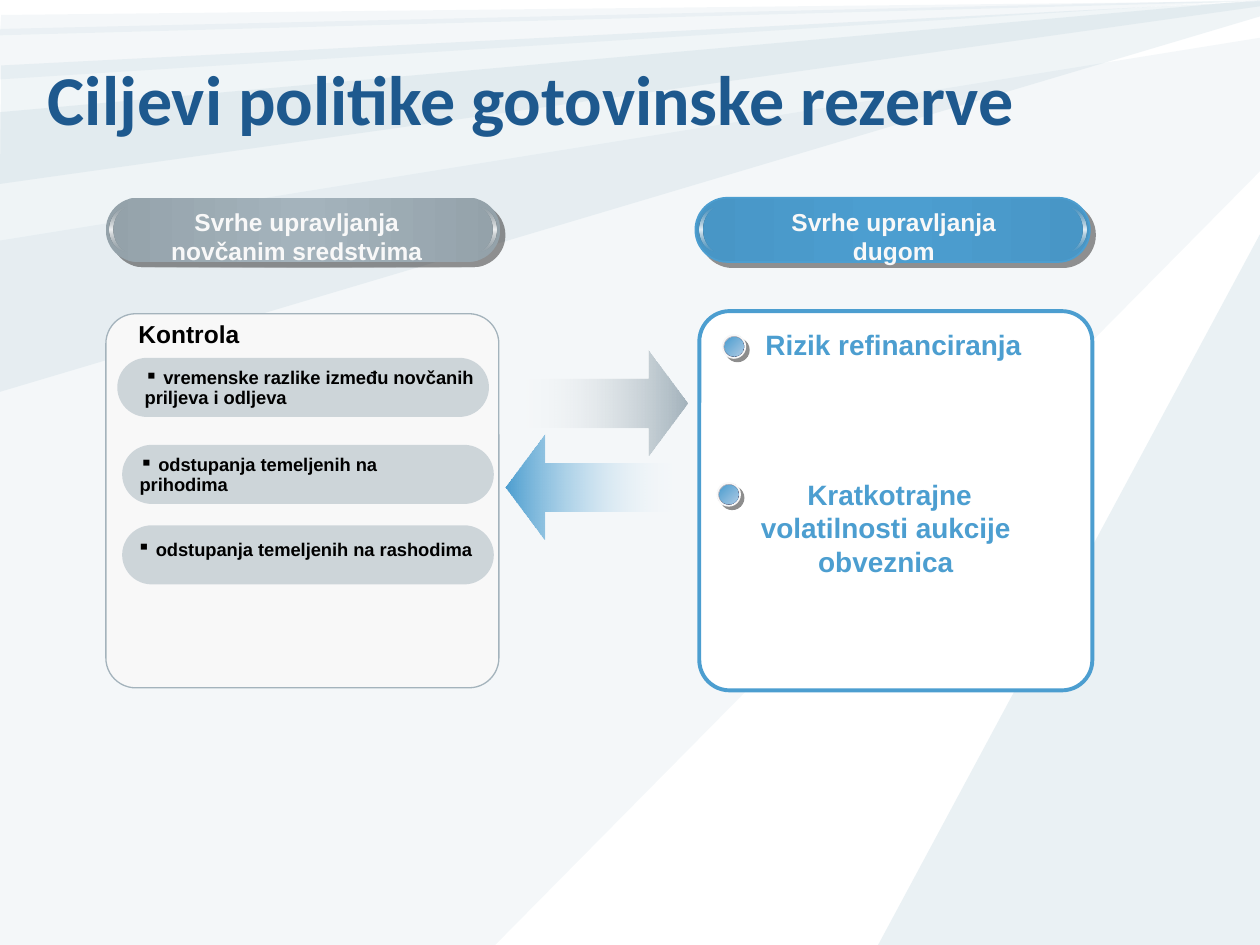
import pptx
import pptx.dml.color
import pptx.enum.shapes
import pptx.enum.text
import pptx.oxml.ns
import pptx.util
from lxml import etree

Pt = pptx.util.Pt
RGBColor = pptx.dml.color.RGBColor
Shape = pptx.enum.shapes.MSO_SHAPE
Align = pptx.enum.text.PP_ALIGN
qn = pptx.oxml.ns.qn

WHITE = RGBColor(0xFF, 0xFF, 0xFF)
BLACK = RGBColor(0x00, 0x00, 0x00)
OFF_WHITE = RGBColor(0xF8, 0xF8, 0xF8)
NAVY = RGBColor(0x1E, 0x59, 0x8E)
BLUE = RGBColor(0x4C, 0x9E, 0xD0)
DEEP_BLUE = RGBColor(0x48, 0x96, 0xC6)
PALE_BLUE = RGBColor(0xAC, 0xC9, 0xE3)
GRAY = RGBColor(0xA4, 0xB3, 0xBC)
DEEP_GRAY = RGBColor(0x94, 0xA2, 0xAA)
RAY = RGBColor(0x97, 0xBA, 0xC9)
GLINT = RGBColor(0xB6, 0xB6, 0xB6)
RIM_LIGHT = RGBColor(0xDD, 0xDD, 0xE1)
RIM_DARK = RGBColor(0x22, 0x38, 0x64)
HEADER_SHADOW = RGBColor(0x29, 0x29, 0x29)
DOT_SHADOW = RGBColor(0x1C, 0x1C, 0x1C)

deck = pptx.Presentation()
deck.slide_width, deck.slide_height = Pt(720), Pt(540)
page = deck.slides.add_slide(deck.slide_layouts[5])
shapes = page.shapes


def paint(shape, stops, angle=0, line=None, width=1, shadow=None, distance=0):
    shape.shadow.inherit = False
    properties = shape._element.spPr
    if len(stops) == 1:
        shape.fill.solid()
        shape.fill.fore_color.rgb = stops[0][1]
        colors = [(properties.find(qn("a:solidFill"))[0], stops[0][2])]
    else:
        shape.fill.gradient()
        gradient = properties.find(qn("a:gradFill"))
        gradient.find(qn("a:lin")).set("ang", str(angle * 60000))
        stop_list = gradient.find(qn("a:gsLst"))
        for old_stop in list(stop_list):
            stop_list.remove(old_stop)
        colors = []
        for position, color, alpha in stops:
            stop = etree.SubElement(stop_list, qn("a:gs"), pos=str(position * 1000))
            colors.append((etree.SubElement(stop, qn("a:srgbClr"), val=str(color)), alpha))
    if shadow is not None:
        effect = etree.SubElement(
            properties.find(qn("a:effectLst")), qn("a:outerShdw"),
            dist=str(Pt(distance)), dir="2700000", algn="ctr", rotWithShape="0")
        colors.append((etree.SubElement(effect, qn("a:srgbClr"), val=str(shadow)), 50))
    for element, alpha in colors:
        if alpha < 100:
            etree.SubElement(element, qn("a:alpha"), val=str(alpha * 1000))
    if line is None:
        shape.line.fill.background()
    else:
        shape.line.color.rgb = line
        shape.line.width = Pt(width)


def add_text(frame, text, size, color, align=Align.CENTER, wrap=True, spacing=None, bullet=False):
    box = shapes.add_textbox(*map(Pt, frame))
    box.text_frame.word_wrap = wrap
    box.text_frame.text = text
    for index, para in enumerate(box.text_frame.paragraphs):
        para.alignment = align
        para.line_spacing = spacing
        font = para.runs[0].font
        font.name, font.size, font.bold = "Arial", Pt(size), True
        font.color.rgb = color
        if bullet and index == 0:
            etree.SubElement(para._p.get_or_add_pPr(), qn("a:buChar"), char="▪")


rays = [
    (10, [(720, 21.6), (0, 137.5), (0, 540), (283, 540), (720, 97.9)]),
    (20, [(720, 133.9), (501.8, 540), (720, 540)]),
    (10, [(0.7, 8.6), (0, 20.2), (720, 0.7)]),
    (10, [(719.3, 0), (0, 45.4), (0, 16.6)]),
    (15, [(720, 9.4), (0, 223.9), (0, 64.1), (720, 0)]),
    (14, [(720, 0.7), (0.7, 37.4), (0, 105.1), (720, 3.6)]),
]
for alpha, points in rays:
    corners = [(Pt(x), Pt(y)) for x, y in points]
    builder = shapes.build_freeform(*corners[0])
    builder.add_line_segments(corners[1:], close=True)
    paint(builder.convert_to_shape(), [(0, RAY, alpha)])

title = shapes.title
shapes._spTree.append(title._element)
title.left, title.top, title.width, title.height = map(Pt, (20.2, 10.8, 581.8, 90))
title.text_frame.text = "Ciljevi politike gotovinske rezerve"
title.text_frame.auto_size = pptx.enum.text.MSO_AUTO_SIZE.NONE
title.text_frame.vertical_anchor = pptx.enum.text.MSO_ANCHOR.MIDDLE
title.text_frame.paragraphs[0].alignment = Align.LEFT
span = title.text_frame.paragraphs[0].runs[0]
span.font.name, span.font.size, span.font.bold = "Calibri", Pt(40), True
span.font.color.rgb = NAVY

panels = [
    ((399.6, 177.8, 224.6, 216.7), WHITE, BLUE, 2.25),
    ((60.5, 179.3, 224.6, 213.8), OFF_WHITE, GRAY, 0.75),
]
for frame, color, border, width in panels:
    panel = shapes.add_shape(Shape.ROUNDED_RECTANGLE, *map(Pt, frame))
    panel.adjustments[0] = 0.08
    paint(panel, [(0, color, 100)], line=border, width=width)

headers = [
    (60.5, "Svrhe upravljanja novčanim sredstvima", DEEP_GRAY, GRAY, None, 81.4),
    (397.4, "Svrhe upravljanja dugom", DEEP_BLUE, BLUE, BLUE, 422.6),
]
for left, text, edge, middle, border, text_left in headers:
    pill = shapes.add_shape(Shape.ROUNDED_RECTANGLE, *map(Pt, (left, 113, 225.4, 36.7)))
    pill.adjustments[0] = 0.5
    paint(pill, [(0, edge, 100), (50, middle, 100), (100, edge, 100)],
          line=border, shadow=HEADER_SHADOW, distance=4.2)
    for offset, flipped in ((213.3, True), (2.2, False)):
        moon = shapes.add_shape(Shape.MOON, *map(Pt, (left + offset, 118.8, 10, 25.2)))
        moon.adjustments[0] = 0.22
        if flipped:
            moon._element.spPr.xfrm.set("flipH", "1")
        paint(moon, [(0, GLINT, 0), (50, WHITE, 84), (100, GLINT, 0)], angle=90)
    add_text((text_left, 114.5, 176.4, 41), text, 14, OFF_WHITE)

arrows = [
    (Shape.RIGHT_ARROW, (290.9, 200.2, 101.9, 60), [(0, WHITE, 0), (100, GRAY, 100)]),
    (Shape.LEFT_ARROW, (288.7, 248.4, 101.9, 60), [(0, BLUE, 100), (100, WHITE, 0)]),
]
for kind, frame, stops in arrows:
    arrow = shapes.add_shape(kind, *map(Pt, frame))
    arrow.adjustments[0], arrow.adjustments[1] = 0.465, 0.376
    paint(arrow, stops)

risks = [
    ((419.8, 183.6, 177.1, 26.6), " Rizik refinanciranja", 412.9, 191.5),
    ((417.6, 269.3, 177.1, 46.1), " Kratkotrajne volatilnosti aukcije obveznica", 409.9, 276),
]
for frame, text, left, top in risks:
    add_text(frame, text, 16, BLUE)
    rim = shapes.add_shape(Shape.OVAL, *map(Pt, (left, top, 13, 13)))
    paint(rim, [(0, RIM_LIGHT, 100), (100, RIM_DARK, 100)], angle=45,
          line=OFF_WHITE, shadow=DOT_SHADOW, distance=2.8)
    dot = shapes.add_shape(Shape.OVAL, *map(Pt, (left + 1.2, top + 1.2, 10.8, 10.8)))
    paint(dot, [(0, BLUE, 100), (100, PALE_BLUE, 100)], angle=45)

add_text((72, 180.7, 72.7, 22.3), "Kontrola", 14, BLACK, Align.LEFT, False, 0.9)

controls = [
    (67, 204.5, (75.6, 207.4, 205.2, 40.3), Align.LEFT,
     " vremenske razlike između novčanih\npriljeva i odljeva"),
    (69.8, 254.2, (72.7, 257, 203, 30.2), Align.LEFT, " odstupanja temeljenih na prihodima"),
    (69.8, 300.2, (71.3, 305.3, 205.9, 30.2), Align.CENTER, " odstupanja temeljenih na rashodima"),
]
for left, top, frame, align, text in controls:
    capsule = shapes.add_shape(Shape.ROUNDED_RECTANGLE, *map(Pt, (left, top, 212.4, 33.8)))
    capsule.adjustments[0] = 0.5
    paint(capsule, [(0, GRAY, 50)])
    add_text(frame, text, 10.5, BLACK, align, False, 0.9, True)

deck.save("out.pptx")
